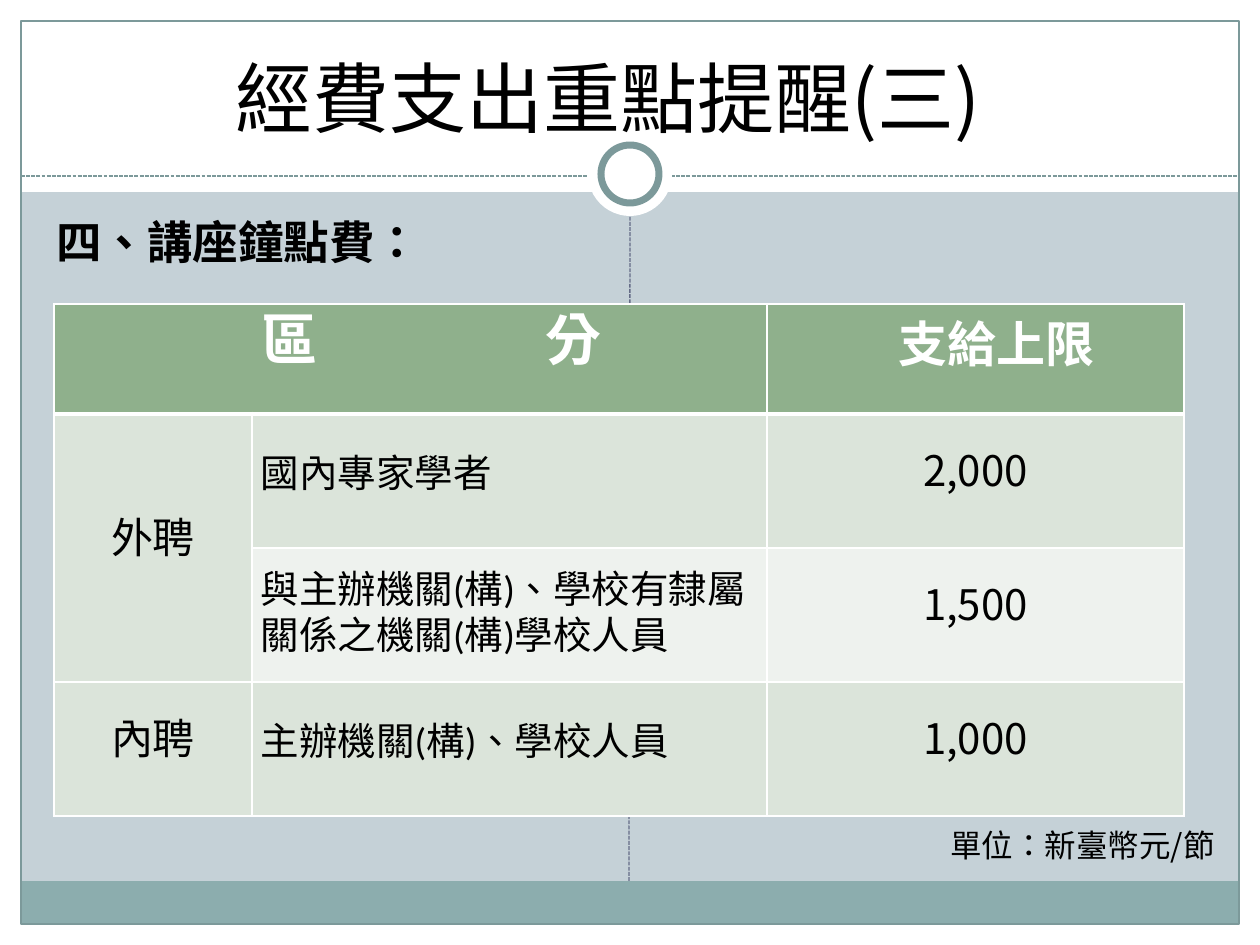
from lxml import etree
from pptx import Presentation
from pptx.dml.color import RGBColor
from pptx.enum.dml import MSO_LINE
from pptx.enum.shapes import MSO_CONNECTOR, MSO_SHAPE
from pptx.enum.text import MSO_ANCHOR, PP_ALIGN
from pptx.oxml.ns import qn
from pptx.util import Emu, Pt

RECT, OVAL = MSO_SHAPE.RECTANGLE, MSO_SHAPE.OVAL
LINE, DASH = MSO_CONNECTOR.STRAIGHT, MSO_LINE.SQUARE_DOT
LEFT, MID = PP_ALIGN.LEFT, PP_ALIGN.CENTER
TOP, CORE, LOW = MSO_ANCHOR.TOP, MSO_ANCHOR.MIDDLE, MSO_ANCHOR.BOTTOM
SANS, TITLE, LATIN = "Noto Sans CJK SC", "Noto Sans CJK JP", "Calibri"
SCALE = 914400 / 126

HEX = {"back": "C5D1D7", "white": "FFFFFF", "black": "000000", "teal": "8CADAE",
       "edge": "7C999A", "slate": "646B86", "head": "8FB08C", "dark": "DBE4DA",
       "pale": "EEF2EE"}

SHAPES = [
    (RECT, (0, 924, 1260, 21), "white", None, 0),
    (RECT, (0, 0, 1260, 192), "white", None, 0),
    (RECT, (0, 0, 21, 945), "white", None, 0),
    (RECT, (1239, 0, 21, 945), "white", None, 0),
    (RECT, (21, 881, 1217, 43), "teal", None, 0),
    (RECT, (21, 21, 1218, 903), None, "edge", 0.75),
    ((21, 176), (1239, 176), "edge"),
    (OVAL, (588, 132, 84, 84), "white", None, 0),
    (OVAL, (601, 145, 58, 58), "white", "edge", 4),
    ((629, 881), (630, 217), "slate"),
]
COLS = [198, 515, 417]
ROWS = [110, 134, 134, 134]
SPANS = [((0, 0), (0, 1)), ((1, 0), (2, 0))]
FILLS = ["head", "dark", "pale", "dark"]
CELLS = {
    (0, 0): ("區分", 32, LATIN, MID, 20),
    (0, 2): ("支給上限", 28, LATIN, MID, 20),
    (1, 0): ("外聘", 24, LATIN, MID, 20),
    (1, 1): ("國內專家學者", 22, LATIN, LEFT, 20),
    (1, 2): ("2,000", 24, SANS, MID, 20),
    (2, 1): ("與主辦機關(構)、學校有隸屬關係之機關(構)學校人員", 22, LATIN, LEFT, 26),
    (2, 2): ("1,500", 24, SANS, MID, 20),
    (3, 0): ("內聘", 24, LATIN, MID, 20),
    (3, 1): ("主辦機關(構)、學校人員", 22, LATIN, LEFT, 20),
    (3, 2): ("1,000", 24, SANS, MID, 20),
}


def px(n):
    return Emu(round(n * SCALE))


def color(name):
    return RGBColor.from_string(HEX[name])


def paint(fill, name):
    if name:
        fill.solid()
        fill.fore_color.rgb = color(name)
    else:
        fill.background()


def write(para, text, size, face, tint="black", bold=False):
    run = para.add_run()
    run.text = text
    font = run.font
    font.size, font.name, font.bold = Pt(size), face, bold
    font.color.rgb = color(tint)
    props = run._r.get_or_add_rPr()
    props.set("lang", "zh-TW")
    east = etree.Element(qn("a:ea"), typeface=SANS if face == LATIN else face)
    props.find(qn("a:latin")).addnext(east)
    return props


def shape(kind, box, fill, edge, width):
    item = slide.shapes.add_shape(kind, *map(px, box))
    item.shadow.inherit = False
    paint(item.fill, fill)
    paint(item.line.fill, edge)
    if edge:
        item.line.width = Pt(width)


def line(start, end, tint):
    item = slide.shapes.add_connector(LINE, *map(px, start + end))
    item.line.color.rgb = color(tint)
    item.line.width = Pt(0.75)
    item.line.dash_style = DASH
    etree.SubElement(item._element.spPr, qn("a:effectLst"))


def label(box, text, size, face, align=LEFT, anchor=TOP, bold=False):
    frame = slide.shapes.add_textbox(*map(px, box)).text_frame
    frame.word_wrap = True
    frame.vertical_anchor = anchor
    para = frame.paragraphs[0]
    para.alignment = align
    write(para, text, size, face, bold=bold)
    return para


def border(cell, row):
    props = cell._tc.get_or_add_tcPr()
    wide = {0: "lnB", 1: "lnT"}.get(row)
    for i, side in enumerate(("lnL", "lnR", "lnT", "lnB")):
        edge = etree.Element(qn("a:" + side), w=str(Pt(3 if side == wide else 1)))
        fill = etree.SubElement(edge, qn("a:solidFill"))
        etree.SubElement(fill, qn("a:srgbClr"), val=HEX["white"])
        props.insert(i, edge)


def grid():
    box = (54, 304, sum(COLS), sum(ROWS))
    table = slide.shapes.add_table(len(ROWS), len(COLS), *map(px, box)).table
    table.first_row = table.horz_banding = False
    for col, width in zip(table.columns, COLS):
        col.width = px(width)
    for row, height in zip(table.rows, ROWS):
        row.height = px(height)
    for first, last in SPANS:
        table.cell(*first).merge(table.cell(*last))
    for r in range(len(ROWS)):
        for c in range(len(COLS)):
            cell = table.cell(r, c)
            paint(cell.fill, FILLS[r])
            border(cell, r)
            if (r, c) in CELLS:
                fill_cell(cell, r, *CELLS[r, c])


def fill_cell(cell, row, text, size, face, align, gap):
    cell.vertical_anchor = CORE
    cell.margin_left = cell.margin_right = px(9)
    cell.margin_top = cell.margin_bottom = 0
    para = cell.text_frame.paragraphs[0]
    para.alignment = align
    para.line_spacing = Pt(gap)
    if row:
        write(para, text, size, face)
        return
    para._p.get_or_add_pPr().set("marL", str(px(42)))
    if text == "區分":
        write(para, text[0], size, face, "white", True).set("spc", "13000")
        text = text[1]
    write(para, text, size, face, "white", True)


deck = Presentation()
deck.slide_width, deck.slide_height = px(1260), px(945)
slide = deck.slides.add_slide(deck.slide_layouts[6])
paint(slide.background.fill, "back")
for item in SHAPES:
    (line if len(item) == 3 else shape)(*item)
topic = label((44, 214, 1172, 630), "四、講座鐘點費：", 26, SANS, bold=True)
topic.line_spacing = 0.9
label((0, -9, 1216, 158), "經費支出重點提醒(三)", 44, TITLE, MID, LOW)
grid()
label((938, 820, 296, 50), "單位：新臺幣元/節", 18, SANS)
deck.save("out.pptx")
